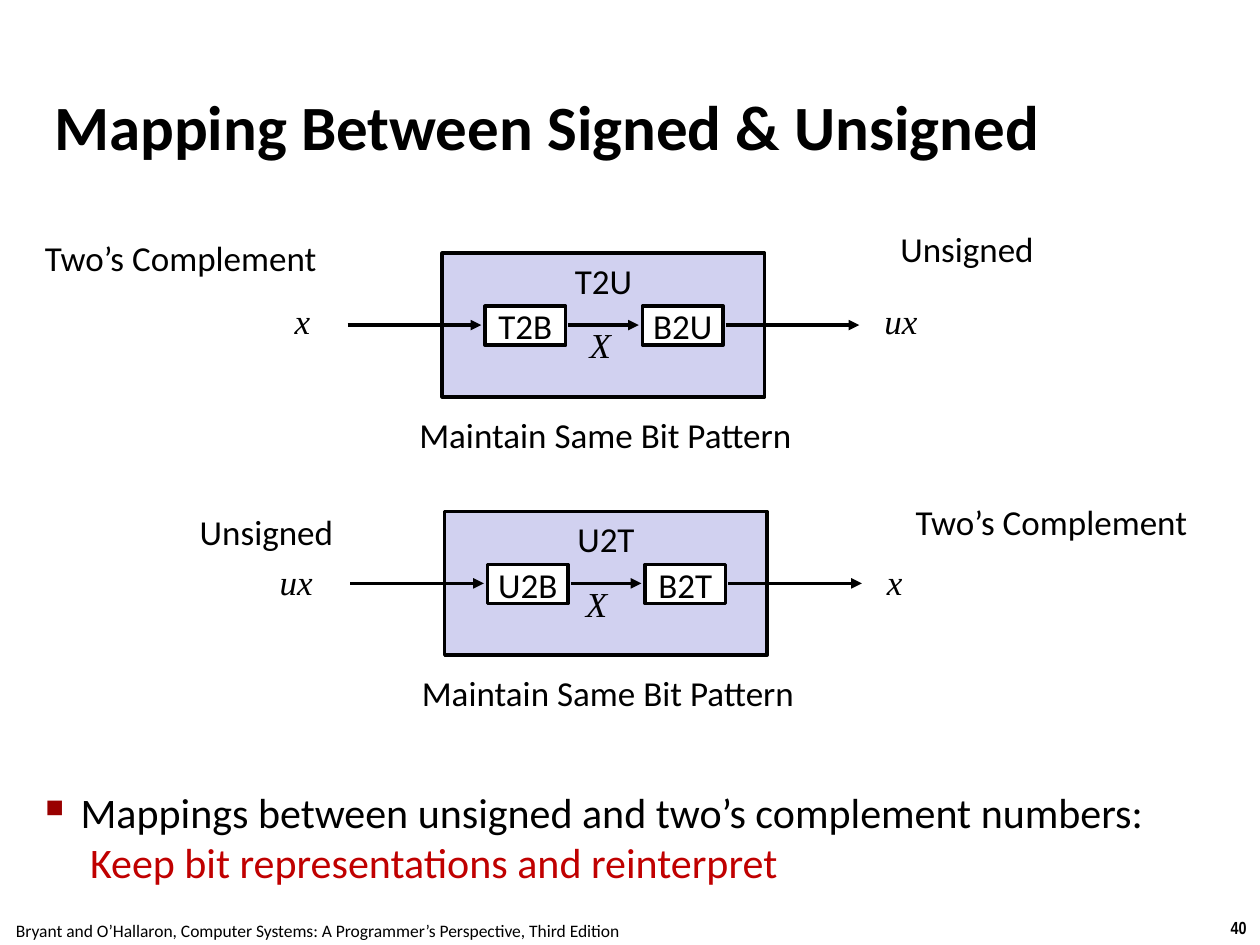
from lxml import etree
from pptx import Presentation
from pptx import util as u
from pptx.dml.color import RGBColor
from pptx.enum import shapes, text
from pptx.oxml.ns import qn

Inches = u.Inches
COLORS = {"ink": "000000", "panel": "D1D1F0", "white": "FFFFFF",
          "bullet": "990000", "accent": "C00000"}
WIDTHS = {"Two’s Complement": 2.37, "Unsigned": 1.27, "x": 0.32, "ux": 0.46, "X": 0.37}
LABEL_HEIGHT = 0.43


def color(name):
    return RGBColor.from_string(COLORS[name])


def add_span(para, words, size=20, font="Calibri", ink="ink", bold=False, italic=False):
    span = para.add_run()
    span.text = words
    span.font.size = u.Pt(size)
    span.font.name = font
    span.font.bold = bold
    span.font.italic = italic
    span.font.color.rgb = color(ink)


def add_text(page, left, top, width, height, inset=(0.1, 0.05), wrap=False,
             align=text.PP_ALIGN.CENTER, anchor=text.MSO_ANCHOR.TOP):
    """Add a text box and return its first paragraph."""
    box = page.shapes.add_textbox(*map(Inches, (left, top, width, height)))
    frame = box.text_frame
    frame.word_wrap = wrap
    frame.vertical_anchor = anchor
    frame.margin_left = frame.margin_right = Inches(inset[0])
    frame.margin_top = frame.margin_bottom = Inches(inset[1])
    para = frame.paragraphs[0]
    para.alignment = align
    return para


def add_label(page, words, left, top, width, **style):
    add_span(add_text(page, left, top, width, LABEL_HEIGHT), words, **style)


def add_symbol(page, words, left, top):
    add_label(page, words, left, top, WIDTHS[words], font="Times New Roman", italic=True)


def add_block(page, words, left, top, width, height, fill, anchor):
    block = page.shapes.add_shape(shapes.MSO_SHAPE.RECTANGLE,
                                  *map(Inches, (left, top, width, height)))
    block.shadow.inherit = False
    block.fill.solid()
    block.fill.fore_color.rgb = color(fill)
    block.line.color.rgb = color("ink")
    block.line.width = u.Pt(2)
    frame = block.text_frame
    frame.word_wrap = False
    frame.vertical_anchor = anchor
    para = frame.paragraphs[0]
    para.alignment = text.PP_ALIGN.CENTER
    add_span(para, words)


def add_arrow(page, start, end, top):
    arrow = page.shapes.add_connector(shapes.MSO_CONNECTOR.STRAIGHT,
                                      *map(Inches, (start, top, end, top)))
    arrow.line.color.rgb = color("ink")
    arrow.line.width = u.Pt(2)
    etree.SubElement(arrow.line._get_or_add_ln(), qn("a:tailEnd"), type="triangle")
    etree.SubElement(arrow._element.spPr, qn("a:effectLst"))


def add_mapping(page, left, top, name, steps, source, target, symbol_left, symbol_top):
    """Draw one conversion; source and target are (type, symbol, type left, type top)."""
    add_block(page, name, left, top, 2.56, 1.14, "panel", text.MSO_ANCHOR.TOP)
    for index, step in enumerate(steps):
        add_block(page, step, left + 0.34 + 1.25 * index, top + 0.42, 0.64, 0.31,
                  "white", text.MSO_ANCHOR.MIDDLE)
    for start, end in ((-0.75, 0.31), (1, 1.56), (2.25, 3.31)):
        add_arrow(page, left + start, left + end, top + 0.57)
    for kind, _, kind_left, kind_top in (source, target):
        add_label(page, kind, left + kind_left, top + kind_top, WIDTHS[kind])
    add_symbol(page, source[1], left - 0.95 - WIDTHS[source[1]], top + symbol_top)
    add_symbol(page, target[1], left + 3.41, top + symbol_top)
    add_symbol(page, "X", left + symbol_left, top + 0.51)
    add_label(page, "Maintain Same Bit Pattern", left - 0.3, top + 1.22, 3.19)


def add_title(page, left, top, width, height):
    para = add_text(page, left, top, width, height, (0.04, 0.04), True,
                    text.PP_ALIGN.LEFT, text.MSO_ANCHOR.MIDDLE)
    add_span(para, "Mapping Between Signed & Unsigned", 36, bold=True)


def add_summary(page, left, top, width, height):
    para = add_text(page, left, top, width, height, (0.04, 0.04), True,
                    text.PP_ALIGN.LEFT)
    para.space_before = u.Pt(6)
    props = para._p.get_or_add_pPr()
    props.set("marL", str(Inches(0.28)))
    props.set("indent", str(Inches(-0.28)))
    bullet_color = etree.SubElement(props, qn("a:buClr"))
    etree.SubElement(bullet_color, qn("a:srgbClr"), val=COLORS["bullet"])
    etree.SubElement(props, qn("a:buSzPct"), val="60000")
    etree.SubElement(props, qn("a:buChar"), char="■")
    add_span(para, "Mappings between unsigned and two’s complement numbers:", 24)
    para.add_line_break()
    add_span(para, " ", 24)
    add_span(para, "Keep bit representations and reinterpret", 24, ink="accent")


def add_footer(page, top):
    number = add_text(page, 9.66, top - 0.02, 0.34, 0.27)
    add_span(number, "40", 10, "Arial Narrow", bold=True)
    credit = add_text(page, -0.02, top, 5.08, 0.27)
    add_span(credit, "Bryant and O’Hallaron, Computer Systems: "
                     "A Programmer’s Perspective, Third Edition", 10)


def main():
    deck = Presentation()
    deck.slide_width, deck.slide_height = Inches(10), Inches(7.5)
    page = deck.slides.add_slide(deck.slide_layouts[6])
    add_title(page, 0.39, 0.58, 8.3, 0.83)
    add_mapping(page, 3.51, 2.01, "T2U", ("T2B", "B2U"),
                ("Two’s Complement", "x", -3.26, -0.18),
                ("Unsigned", "ux", 3.53, -0.25), 1.07, 0.32)
    add_mapping(page, 3.53, 4.06, "U2T", ("U2B", "B2T"),
                ("Unsigned", "ux", -2.05, -0.06),
                ("Two’s Complement", "x", 3.63, -0.14), 1.02, 0.34)
    add_summary(page, 0.32, 6.2, 9.47, 0.97)
    add_footer(page, 7.25)
    deck.save("out.pptx")


if __name__ == "__main__":
    main()
